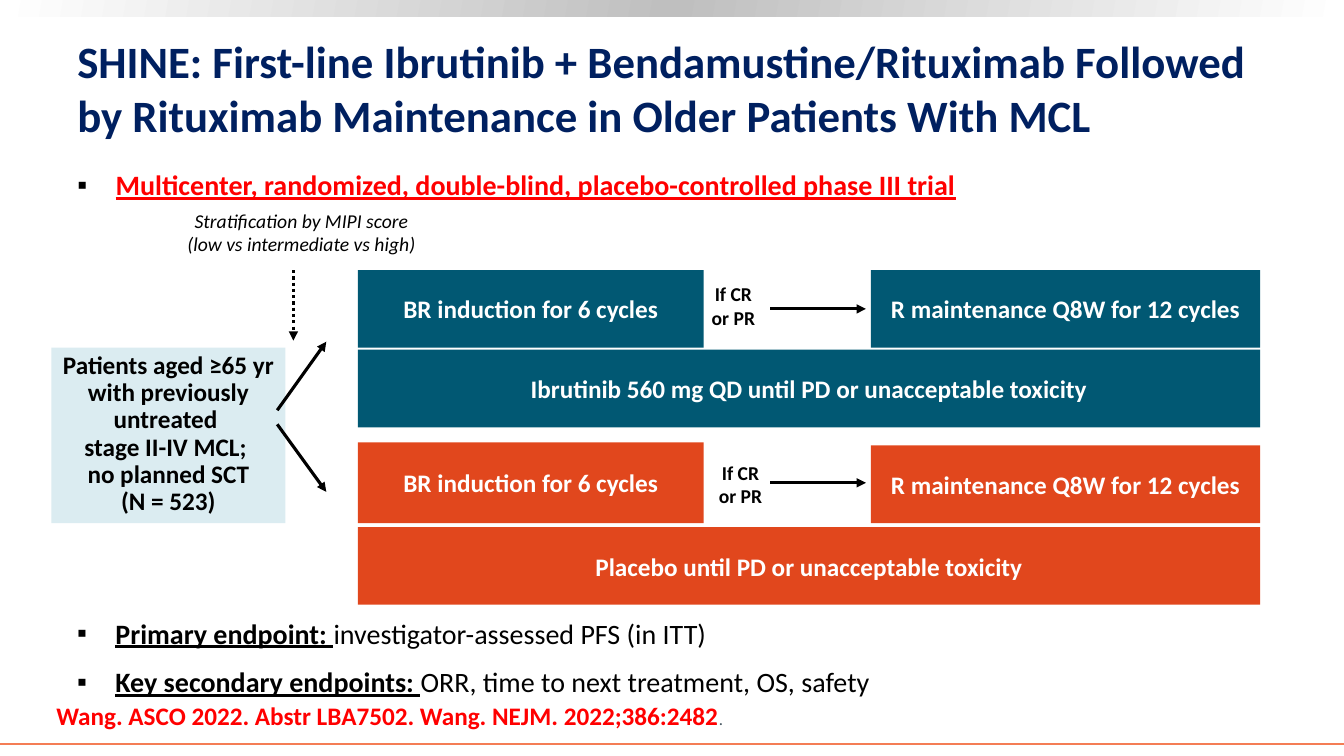
from copy import deepcopy

from lxml.etree import SubElement
from pptx import Presentation
from pptx.dml.color import RGBColor
from pptx.enum.dml import MSO_LINE
from pptx.enum.shapes import MSO_CONNECTOR as CONNECTOR, MSO_SHAPE as SHAPE
from pptx.enum.text import MSO_ANCHOR as ANCHOR, MSO_AUTO_SIZE as AUTO_SIZE, PP_ALIGN as ALIGN
from pptx.oxml.ns import qn
from pptx.util import Inches, Pt

# Grid: 100 columns by 100 rows over the slide
SLIDE_W, SLIDE_H = Inches(13.33), Inches(7.5)
COL, ROW = SLIDE_W / 100, SLIDE_H / 100
FONT = "Calibri"
BLACK, WHITE, RED, NAVY = "000000", "FFFFFF", "FF0000", "002060"
TEAL, ORANGE, PALE_BLUE = "015873", "E1471D", "DBECF1"


def rgb(hex_colour):
    return RGBColor.from_string(hex_colour)


def grid(left, top, width, height):
    return int(left * COL), int(top * ROW), int(width * COL), int(height * ROW)


def add_run(paragraph, text, size, colour, bold=False, italic=False, underline=False):
    for number, line in enumerate(text.split("\n")):
        if number:
            paragraph.add_line_break()
        run = paragraph.add_run()
        run.text = line
        font = run.font
        font.name, font.size, font.color.rgb = FONT, Pt(size), rgb(colour)
        font.bold, font.italic, font.underline = bold, italic, underline


def add_bullet(paragraph, space_before, runs):
    props = paragraph._p.get_or_add_pPr()
    props.set("marL", str(Inches(0.38)))
    props.set("indent", str(-Inches(0.38)))
    SubElement(SubElement(props, qn("a:buClr")), qn("a:srgbClr")).set("val", BLACK)
    SubElement(props, qn("a:buFont")).set("typeface", "Arial")
    SubElement(props, qn("a:buChar")).set("char", "▪")
    paragraph.line_spacing = 0.9
    paragraph.space_before, paragraph.space_after = Pt(space_before), Pt(7)
    for text, colour, strong in runs:
        add_run(paragraph, text, 20, colour, bold=strong, underline=strong)


def add_text(slide, box, wrap=True, anchor=ANCHOR.TOP):
    frame = slide.shapes.add_textbox(*grid(*box)).text_frame
    frame.word_wrap, frame.vertical_anchor = wrap, anchor
    return frame


def add_panel(slide, box, fill, anchor=ANCHOR.MIDDLE):
    panel = slide.shapes.add_shape(SHAPE.RECTANGLE, *grid(*box))
    panel.shadow.inherit = False
    panel.fill.solid()
    panel.fill.fore_color.rgb = rgb(fill)
    panel.line.fill.background()
    panel.text_frame.word_wrap = True
    panel.text_frame.vertical_anchor = anchor
    panel.text_frame.paragraphs[0].alignment = ALIGN.CENTER
    return panel


def add_line(slide, start, end, colour=BLACK, width=2.25, arrow=True, dash=None):
    line = slide.shapes.add_connector(
        CONNECTOR.STRAIGHT, *grid(*start, 0, 0)[:2], *grid(*end, 0, 0)[:2])
    line.line.color.rgb, line.line.width = rgb(colour), Pt(width)
    if dash:
        line.line.dash_style = dash
    if arrow:
        SubElement(line.line._get_or_add_ln(), qn("a:tailEnd")).set("type", "triangle")
    SubElement(line._element.spPr, qn("a:effectLst"))


def add_frame(slide):
    """Gradient strip along the top, rule along the bottom."""
    fill = add_panel(slide, (0, 0, 100, 2.13), WHITE).fill
    fill.gradient()
    fill.gradient_angle = 170
    first_stop = fill.gradient_stops[0]._gs
    first_stop.addnext(deepcopy(first_stop))
    for stop, position, colour in zip(fill.gradient_stops, (0, 0.5, 1), (WHITE, "BFBFBF", WHITE)):
        stop.position, stop.color.rgb = position, rgb(colour)
    add_line(slide, (0, 98.4), (100, 98.4), "F47D55", 1.5, arrow=False)


def place(placeholder, box, anchor):
    placeholder.left, placeholder.top, placeholder.width, placeholder.height = grid(*box)
    frame = placeholder.text_frame
    frame.word_wrap, frame.vertical_anchor, frame.auto_size = True, anchor, AUTO_SIZE.NONE
    return frame.paragraphs[0]


def add_heading(slide, title_box, body_box):
    title = place(slide.shapes.title, title_box, ANCHOR.MIDDLE)
    title.alignment = ALIGN.LEFT
    add_run(title, "SHINE: First-line Ibrutinib + Bendamustine/Rituximab Followed "
            "by Rituximab Maintenance in Older Patients With MCL", 32, NAVY, bold=True)
    design = place(slide.placeholders[1], body_box, ANCHOR.TOP)
    add_bullet(design, 0, [(
        "Multicenter, randomized, double-blind, placebo-controlled phase III trial", RED, True)])


def add_population(slide, box):
    """Patient box, with arrows to the two arms and the stratification note."""
    left, top, width, height = box
    patients = add_panel(slide, box, PALE_BLUE, ANCHOR.TOP).text_frame
    criteria, count = patients.paragraphs[0], patients.add_paragraph()
    add_run(criteria, "Patients aged ≥65 yr with previously untreated \n"
            "stage II-IV MCL; \nno planned SCT", 18, BLACK, bold=True)
    add_run(count, "(N = 523)", 18, BLACK, bold=True)
    for paragraph in (criteria, count):
        paragraph.alignment, paragraph.line_spacing = ALIGN.CENTER, 0.9

    fork, tips = left + width - 0.6, left + width + 3.05
    add_line(slide, (fork, top + 8.27), (tips, top - 0.8))
    add_line(slide, (fork, top + 10.13), (tips, top + 19.07))

    strata = add_text(slide, (left + 9.3, top - 19.07, 18.6, 7.6), wrap=False).paragraphs[0]
    strata.alignment = ALIGN.CENTER
    add_run(strata, "Stratification by MIPI score\n(low vs intermediate vs high)",
            14, BLACK, italic=True)
    add_line(slide, (left + 18, top - 10.27), (left + 18, top - 0.93), dash=MSO_LINE.ROUND_DOT)


def add_arm(slide, box, colour, drug, step, label_offset):
    """Induction and maintenance side by side, study drug underneath."""
    left, top, width, height = box
    bar, induction_w, maintenance_w = 10.27, 25.73, 28.95
    induction_h = bar + step
    bars = [
        ("BR induction for 6 cycles", (left, top, induction_w, induction_h)),
        ("R maintenance Q8W for 12 cycles",
         (left + width - maintenance_w, top + step, maintenance_w, bar)),
        (drug, (left, top + height - bar, width, bar)),
    ]
    for text, bar_box in bars:
        panel = add_panel(slide, bar_box, colour)
        add_run(panel.text_frame.paragraphs[0], text, 18, WHITE, bold=True)

    label_x, label_y = label_offset
    response = add_text(slide, (left + label_x, top + label_y, 5.48, 7.6)).paragraphs[0]
    response.alignment = ALIGN.CENTER
    add_run(response, "If CR or PR", 14, BLACK, bold=True)
    middle = top + induction_h / 2
    add_line(slide, (left + 30.7, middle), (left + 37.8, middle))


def add_endpoints(slide, box):
    endpoints = add_text(slide, box)
    add_bullet(endpoints.paragraphs[0], 0, [
        ("Primary endpoint: ", BLACK, True),
        ("investigator-assessed PFS (in ITT)", BLACK, False)])
    add_bullet(endpoints.add_paragraph(), 6, [
        ("Key secondary endpoints: ", BLACK, True),
        ("ORR, time to next treatment, OS, safety", BLACK, False)])


def add_citation(slide, box):
    citation = add_text(slide, box, anchor=ANCHOR.BOTTOM).paragraphs[0]
    add_run(citation, "Wang. ASCO 2022. Abstr LBA7502. Wang. NEJM. 2022;386:2482",
            18, RED, bold=True)
    add_run(citation, ".", 12, "455560")


def main():
    deck = Presentation()
    deck.slide_width, deck.slide_height = SLIDE_W, SLIDE_H
    slide = deck.slides.add_slide(deck.slide_layouts[1])
    add_frame(slide)
    add_heading(slide, (5, 3.5, 89.2, 16.1), (5, 22, 89.2, 67.9))
    add_population(slide, (3.83, 46, 17.4, 23.2))
    add_arm(slide, (26.63, 35.73, 67.13, 20.8), TEAL,
            "Ibrutinib 560 mg QD until PD or unacceptable toxicity", 0, (25.2, 0.93))
    add_arm(slide, (26.63, 58.53, 67.13, 21.47), ORANGE,
            "Placebo until PD or unacceptable toxicity", 0.4, (25.73, 1.73))
    add_endpoints(slide, (5, 81.33, 89.2, 11.07))
    add_citation(slide, (3.45, 92, 64.4, 5.3))
    deck.save("out.pptx")


if __name__ == "__main__":
    main()
